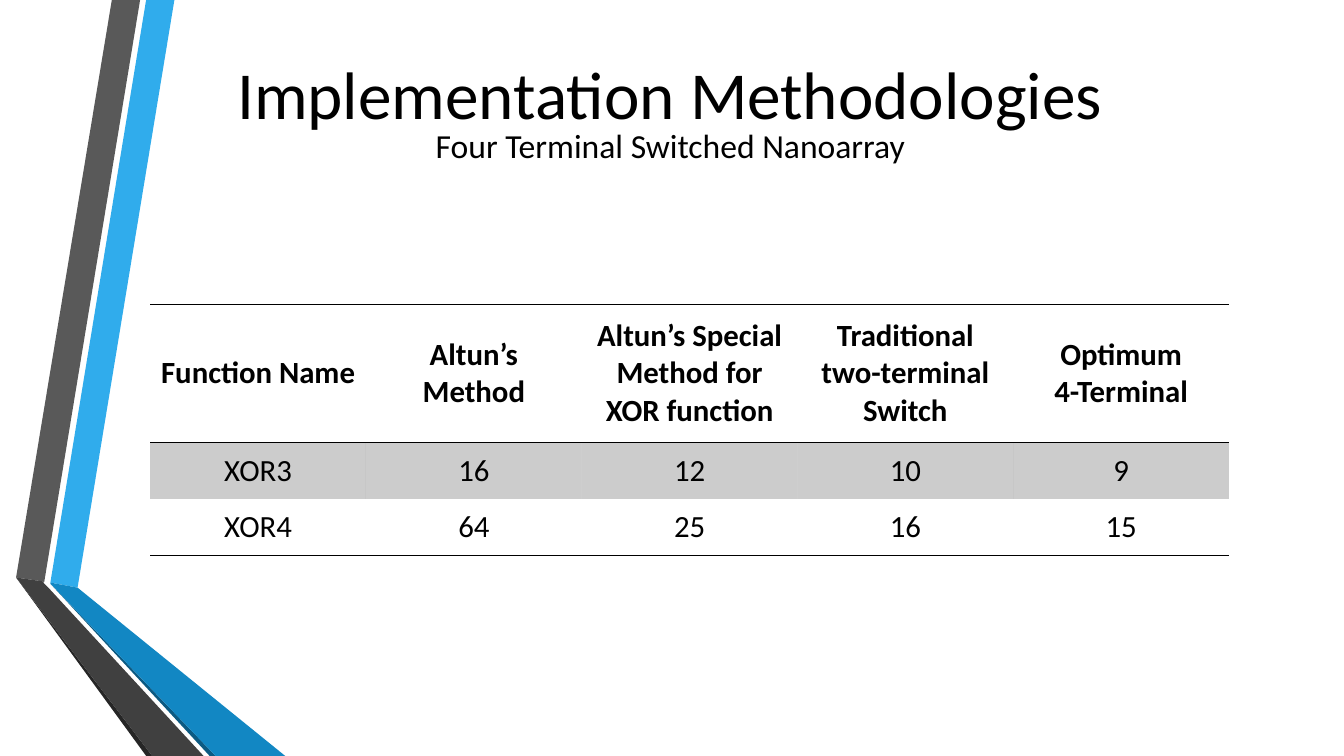
from lxml.etree import SubElement
from pptx import Presentation
from pptx.dml.color import RGBColor
from pptx.enum.text import MSO_ANCHOR as Anchor, MSO_AUTO_SIZE as AutoSize, PP_ALIGN as Align
from pptx.oxml.ns import qn
from pptx.util import Inches, Pt

TITLE = "Implementation Methodologies"
SUBTITLE = "Four Terminal Switched Nanoarray"
# One tuple per row; each cell is a list of paragraphs.
ROWS = [
    (["Function Name"], ["Altun’s Method"], ["Altun’s Special Method for XOR function"],
     ["Traditional two-terminal Switch"], ["Optimum", "4-Terminal"]),
    (["XOR3"], ["16"], ["12"], ["10"], ["9"]),
    (["XOR4"], ["64"], ["25"], ["16"], ["15"]),
]
COLORS = {
    "text": "000000", "sky": "30ACEC", "grey": "595959", "black": "262626",
    "navy": "0C5A82", "blue": "1287C3", "charcoal": "404040",
}
FONT = "Calibri"
SLIDE_W, SLIDE_H = 13.33, 7.5
TABLE_LEFT, TABLE_TOP, COLUMN_W = 1.49, 3.02, 2.14
ROW_HEIGHTS = [1.37, 0.56, 0.56]
RULED_SIDES = {0: ("T", "B"), 1: ("T",), 2: ("B",)}
BAND_ROW, BAND_ALPHA = 1, 20

# Corners of the folded ribbons, in inches
RIBBONS = [
    ("sky", [(0.5, 5.78), (0.77, 5.83), (1.73, 0), (1.45, 0)]),
    ("grey", [(1.39, 0), (1.11, 0), (0.16, 5.73), (0.44, 5.77)]),
    ("black", [(0.16, 5.73), (1.45, SLIDE_H), (1.51, SLIDE_H)]),
    ("navy", [(0.5, 5.79), (2.08, SLIDE_H), (2.14, SLIDE_H)]),
    ("blue", [(0.5, 5.79), (2.14, SLIDE_H), (2.83, SLIDE_H), (0.77, 5.83), (0.5, 5.78)]),
    ("charcoal", [(2.02, SLIDE_H), (0.48, 5.83), (0.43, 5.78), (0.44, 5.77),
                  (0.16, 5.73), (1.51, SLIDE_H)]),
]


def color(name):
    return RGBColor.from_string(COLORS[name])


def write(frame, lines, size, bold=False):
    frame.vertical_anchor = Anchor.MIDDLE
    for index, line in enumerate(lines):
        paragraph = frame.add_paragraph() if index else frame.paragraphs[0]
        paragraph.alignment = Align.CENTER
        run = paragraph.add_run()
        run.text = line
        run.font.name, run.font.size, run.font.bold = FONT, Pt(size), bold
        run.font.color.rgb = color("text")


def draw_ribbon(shapes, fill, corners):
    points = [(Inches(x), Inches(y)) for x, y in corners]
    builder = shapes.build_freeform(*points[0])
    builder.add_line_segments(points[1:], close=True)
    ribbon = builder.convert_to_shape()
    ribbon.shadow.inherit = False
    ribbon.fill.solid()
    ribbon.fill.fore_color.rgb = color(fill)
    ribbon.line.fill.background()


def rule_cell(cell, ruled):
    """Draw 1 pt rules on the given sides and clear the other sides."""
    properties = cell._tc.get_or_add_tcPr()
    for side in "LRTB":
        line = SubElement(properties, qn(f"a:ln{side}"), w=str(Pt(1)))
        if side in ruled:
            fill = SubElement(line, qn("a:solidFill"))
            SubElement(fill, qn("a:srgbClr"), val=COLORS["text"])
        else:
            SubElement(line, qn("a:noFill"))


def fill_cell(cell, banded):
    if not banded:
        cell.fill.background()
        return
    cell.fill.solid()
    cell.fill.fore_color.rgb = color("text")
    tint = cell._tc.tcPr.find(".//" + qn("a:solidFill") + "[last()]")
    tint = cell._tc.tcPr.find(qn("a:solidFill")).find(qn("a:srgbClr"))
    SubElement(tint, qn("a:alpha"), val=str(BAND_ALPHA * 1000))


def add_results(shapes):
    columns = len(ROWS[0])
    table = shapes.add_table(
        len(ROWS), columns, Inches(TABLE_LEFT), Inches(TABLE_TOP),
        Inches(COLUMN_W * columns), Inches(sum(ROW_HEIGHTS))).table
    table.horz_banding = False
    for column in table.columns:
        column.width = Inches(COLUMN_W)
    for r, row in enumerate(ROWS):
        table.rows[r].height = Inches(ROW_HEIGHTS[r])
        for c, lines in enumerate(row):
            cell = table.cell(r, c)
            cell.vertical_anchor = Anchor.MIDDLE
            rule_cell(cell, RULED_SIDES[r])
            fill_cell(cell, r == BAND_ROW)
            write(cell.text_frame, lines, 22, bold=r == 0)


def main():
    deck = Presentation()
    deck.slide_width, deck.slide_height = Inches(SLIDE_W), Inches(SLIDE_H)
    shapes = deck.slides.add_slide(deck.slide_layouts[5]).shapes

    for fill, corners in RIBBONS:
        draw_ribbon(shapes, fill, corners)

    title = shapes.title
    title.left, title.top = Inches(1.31), Inches(0.39)
    title.width, title.height = Inches(10.67), Inches(1.05)
    write(title.text_frame, [TITLE], 48)
    shapes._spTree.append(title._element)  # in front of the ribbons

    subtitle = shapes.add_textbox(Inches(4.15), Inches(1.19), Inches(5), Inches(0.5))
    subtitle.text_frame.word_wrap = False
    subtitle.text_frame.auto_size = AutoSize.SHAPE_TO_FIT_TEXT
    write(subtitle.text_frame, [SUBTITLE], 24)
    subtitle.text_frame.vertical_anchor = Anchor.TOP

    add_results(shapes)
    deck.save("out.pptx")


if __name__ == "__main__":
    main()
